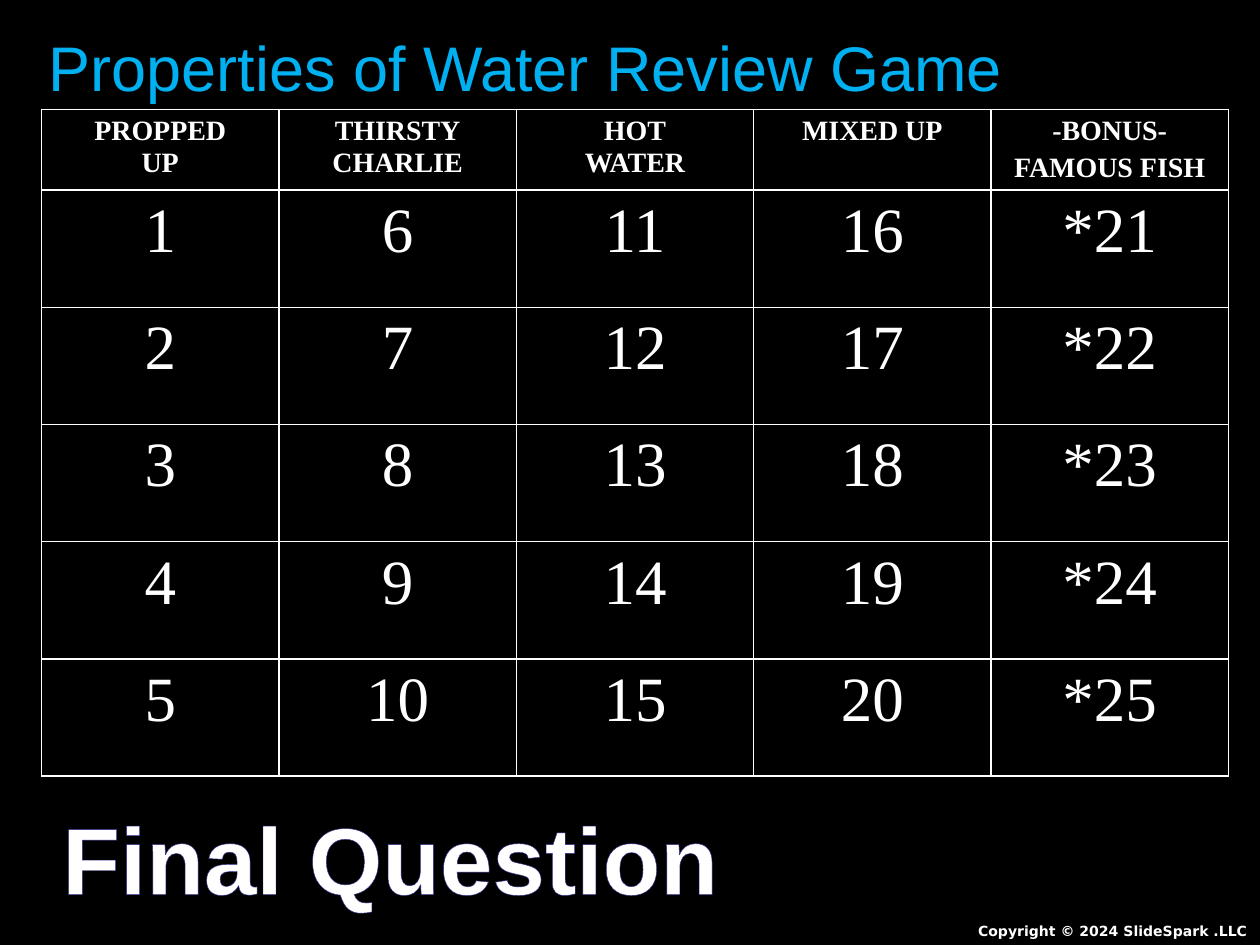
from lxml.etree import SubElement
from pptx import Presentation
from pptx.dml.color import RGBColor
from pptx.enum.text import PP_ALIGN
from pptx.oxml.ns import qn
from pptx.util import Inches, Pt


def style(paragraph, font_name, size, color, bold, align):
    paragraph.alignment = align
    paragraph.font.name = font_name
    paragraph.font.size = Pt(size)
    paragraph.font.bold = bold
    paragraph.font.color.rgb = RGBColor.from_string(color)


def add_line(parent, tag, width, color):
    line = SubElement(parent, qn(tag), w=str(Pt(width)))
    fill = SubElement(line, qn("a:solidFill"))
    SubElement(fill, qn("a:srgbClr"), val=color)
    return line


presentation = Presentation()
presentation.slide_width = Inches(10)
presentation.slide_height = Inches(7.5)
slide = presentation.slides.add_slide(presentation.slide_layouts[6])
slide.background.fill.solid()
slide.background.fill.fore_color.rgb = RGBColor.from_string("000000")

categories = ["PROPPED\vUP", "THIRSTY\vCHARLIE", "HOT\vWATER", "MIXED UP", "-BONUS-\nFAMOUS FISH"]
question_rows = 5
board = slide.shapes.add_table(
    question_rows + 1, len(categories), Inches(0.33), Inches(0.87), Inches(9.42), Inches(5.3)
).table
for column in board.columns:
    column.width = Inches(9.42 / len(categories))
for row_index, row in enumerate(board.rows):
    row.height = Inches(0.93 if row_index else 0.64)
    for column_index, cell in enumerate(row.cells):
        if row_index:
            number = column_index * question_rows + row_index
            cell.text = f"*{number}" if column_index == len(categories) - 1 else str(number)
        else:
            cell.text = categories[column_index]
        for paragraph_index, paragraph in enumerate(cell.text_frame.paragraphs):
            style(paragraph, "Times New Roman", 36 if row_index else 16, "FFFFFF",
                  row_index == 0, PP_ALIGN.CENTER)
            if paragraph_index:
                paragraph.space_before = Pt(3.2)
        properties = cell._tc.get_or_add_tcPr()
        for side in ("a:lnL", "a:lnR", "a:lnT", "a:lnB"):
            add_line(properties, side, 1, "FFFFFF")
        cell.fill.solid()
        cell.fill.fore_color.rgb = RGBColor.from_string("000000")

labels = [
    ("Copyright © 2024 SlideSpark .LLC", 7.08, 7.27, 2.92, 0.23, 0.05,
     "DejaVu Sans", 8, "FFFFFF", True, PP_ALIGN.RIGHT),
    ("Properties of Water Review Game", 0.29, 0.13, 8.25, 0.7, 0.1,
     "Arial", 36, "00B0F0", False, PP_ALIGN.LEFT),
    ("Final Question", 0.37, 6.23, 5.46, 1.01, 0.12,
     "Arial", 54, "FFFFFF", True, PP_ALIGN.CENTER),
]
for text, left, top, width, height, margin_top, *text_style in labels:
    text_box = slide.shapes.add_textbox(Inches(left), Inches(top), Inches(width), Inches(height))
    text_frame = text_box.text_frame
    text_frame.word_wrap = text != "Final Question"
    text_frame.margin_top = Inches(margin_top)
    text_frame.text = text
    style(text_frame.paragraphs[0], *text_style)
    if text == "Final Question":
        run_properties = text_frame.paragraphs[0].runs[0].font._element
        add_line(run_properties, "a:ln", 0.52, "333399")

presentation.save("out.pptx")
